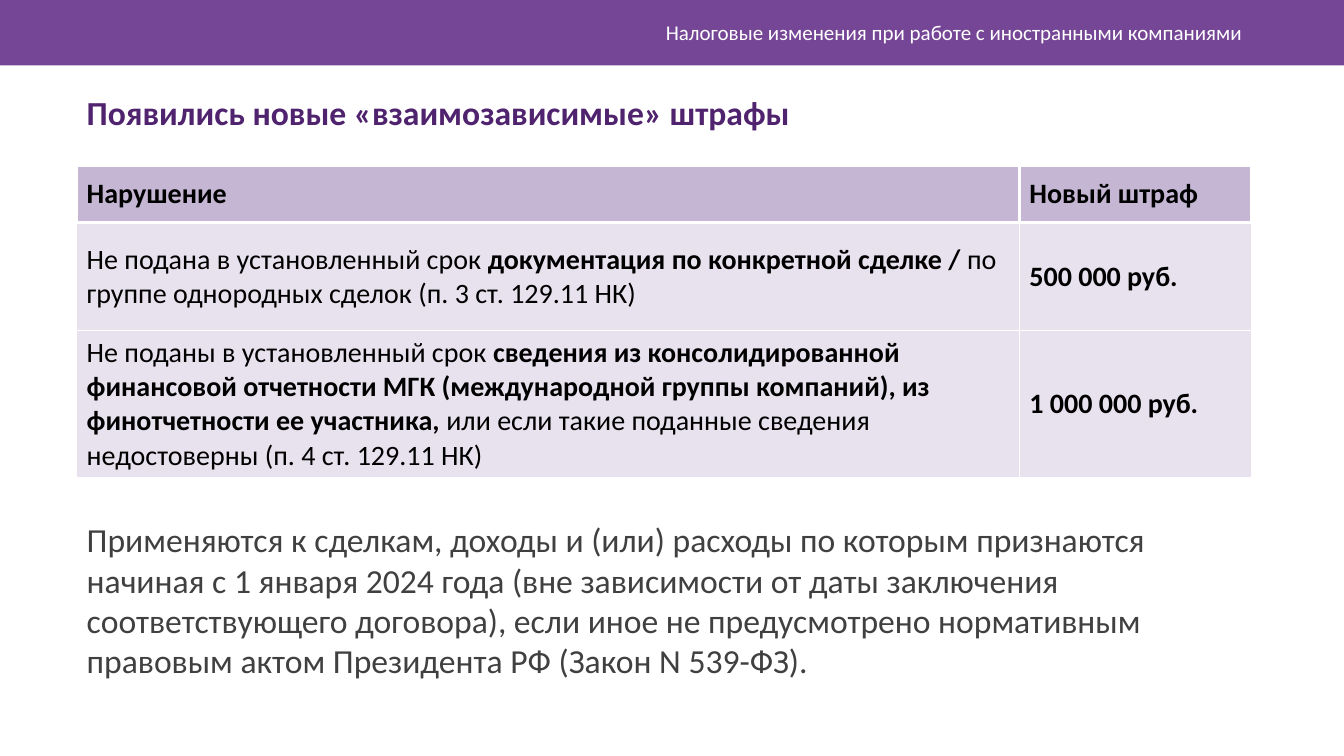
from lxml.etree import SubElement
from pptx import Presentation
from pptx.dml.color import RGBColor
from pptx.enum.shapes import MSO_SHAPE
from pptx.enum.text import MSO_ANCHOR, MSO_AUTO_SIZE, PP_ALIGN
from pptx.oxml import parse_xml
from pptx.oxml.ns import nsdecls, qn
from pptx.util import Inches, Pt

# Content: table cells are lists of (text, bold) runs
TOPIC = "Налоговые изменения при работе с иностранными компаниями"
TITLE = "Появились новые «взаимозависимые» штрафы"
NOTE = ("Применяются к сделкам, доходы и (или) расходы по которым признаются "
        "начиная с 1 января 2024 года (вне зависимости от даты заключения "
        "соответствующего договора), если иное не предусмотрено нормативным "
        "правовым актом Президента РФ (Закон N 539-ФЗ).")
FINES = [
    [[("Нарушение", True)], [("Новый штраф", True)]],
    [[("Не подана в установленный срок ", False),
      ("документация по конкретной сделке / ", True),
      ("по группе однородных сделок (п. 3 ст. 129.11 НК)", False)],
     [("500 000 руб.", True)]],
    [[("Не поданы в установленный срок ", False),
      ("сведения из консолидированной финансовой отчетности МГК "
       "(международной группы компаний), из финотчетности ее участника, ", True),
      ("или если такие поданные сведения недостоверны (п. 4 ст. 129.11 НК)", False)],
     [("1 000 000 руб.", True)]],
]

# Style
FONT = "Calibri"
BAND = RGBColor(0x76, 0x46, 0x96)
TITLE_COLOR = RGBColor(0x50, 0x23, 0x6E)
CELL_FILL = RGBColor(0x8D, 0x6F, 0xAB)
NOTE_COLOR = RGBColor(0x40, 0x40, 0x40)
WHITE = RGBColor(0xFF, 0xFF, 0xFF)
BLACK = RGBColor(0, 0, 0)
HEADER_OPACITY, BODY_OPACITY = 50, 20
HEADER_LINE, BODY_LINE = 2.25, 1

# Layout, inches
SLIDE_WIDTH, SLIDE_HEIGHT = 13.33, 7.5
LEFT, TEXT_WIDTH = 0.76, 11.73
COLUMN_WIDTHS = [9.35, 2.3]
ROW_HEIGHTS = [0.57, 1.07, 1.42]


def place(shape, left, top, width, height):
    shape.left, shape.top = Inches(left), Inches(top)
    shape.width, shape.height = Inches(width), Inches(height)


def style(paragraph, size, color, bold=None):
    font = paragraph.font
    font.name, font.size, font.bold = FONT, Pt(size), bold
    font.color.rgb = color


def fill_text(shape, text, size, color, bold=False, anchor=MSO_ANCHOR.TOP,
              align=PP_ALIGN.LEFT):
    frame = shape.text_frame
    frame.word_wrap = True
    frame.auto_size = MSO_AUTO_SIZE.NONE
    frame.vertical_anchor = anchor
    paragraph = frame.paragraphs[0]
    paragraph.text = text
    paragraph.alignment = align
    paragraph.space_before = Pt(0)
    properties = paragraph._p.get_or_add_pPr()
    properties.set("marL", "0")
    properties.set("indent", "0")
    SubElement(properties, qn("a:buNone"))
    style(paragraph, size, color, bold)


def fill_cell(cell, opacity):
    cell.fill.solid()
    cell.fill.fore_color.rgb = CELL_FILL
    color = cell._tc.tcPr.find(".//" + qn("a:srgbClr"))
    SubElement(color, qn("a:alpha")).set("val", str(opacity * 1000))


def border_cell(cell, widths):
    """Draw white borders; widths maps a side (L, R, T, B) to points."""
    for index, (side, width) in enumerate(widths.items()):
        line = parse_xml(
            f'<a:ln{side} {nsdecls("a")} w="{int(Pt(width))}"><a:solidFill>'
            f'<a:srgbClr val="{WHITE}"/></a:solidFill></a:ln{side}>')
        cell._tc.tcPr.insert(index, line)


presentation = Presentation()
presentation.slide_width = Inches(SLIDE_WIDTH)
presentation.slide_height = Inches(SLIDE_HEIGHT)
slide = presentation.slides.add_slide(presentation.slide_layouts[1])

# Top band with the topic
band = slide.shapes.add_shape(MSO_SHAPE.RECTANGLE, 0, 0,
                              Inches(SLIDE_WIDTH), Inches(0.65))
band.shadow.inherit = False
band.fill.solid()
band.fill.fore_color.rgb = BAND
band.line.fill.background()
topic = slide.shapes.add_textbox(Inches(3.54), Inches(0.12), Inches(8.88), Inches(0.4))
fill_text(topic, TOPIC, 15, WHITE, anchor=MSO_ANCHOR.MIDDLE, align=PP_ALIGN.RIGHT)

# Title and closing note
title, note = slide.shapes.title, slide.placeholders[1]
place(title, LEFT, 0.86, TEXT_WIDTH, 0.55)
fill_text(title, TITLE, 24, TITLE_COLOR, bold=True)
place(note, LEFT, 5.1, TEXT_WIDTH, 1.75)
fill_text(note, NOTE, 24, NOTE_COLOR)

# Table of fines
table = slide.shapes.add_table(
    len(FINES), len(COLUMN_WIDTHS), Inches(LEFT), Inches(1.64),
    Inches(sum(COLUMN_WIDTHS)), Inches(sum(ROW_HEIGHTS))).table
for column, width in zip(table.columns, COLUMN_WIDTHS):
    column.width = Inches(width)
for row_index, (row, height) in enumerate(zip(FINES, ROW_HEIGHTS)):
    table.rows[row_index].height = Inches(height)
    is_header = row_index == 0
    side_line = HEADER_LINE if is_header else BODY_LINE
    top_line = HEADER_LINE if row_index <= 1 else BODY_LINE
    for column_index, runs in enumerate(row):
        cell = table.cell(row_index, column_index)
        cell.vertical_anchor = MSO_ANCHOR.MIDDLE
        paragraph = cell.text_frame.paragraphs[0]
        style(paragraph, 20, BLACK)
        for text, bold in runs:
            run = paragraph.add_run()
            run.text = text
            run.font.bold = bold
        fill_cell(cell, HEADER_OPACITY if is_header else BODY_OPACITY)
        border_cell(cell, {"L": side_line, "R": side_line,
                           "T": top_line, "B": side_line})

presentation.save("out.pptx")
